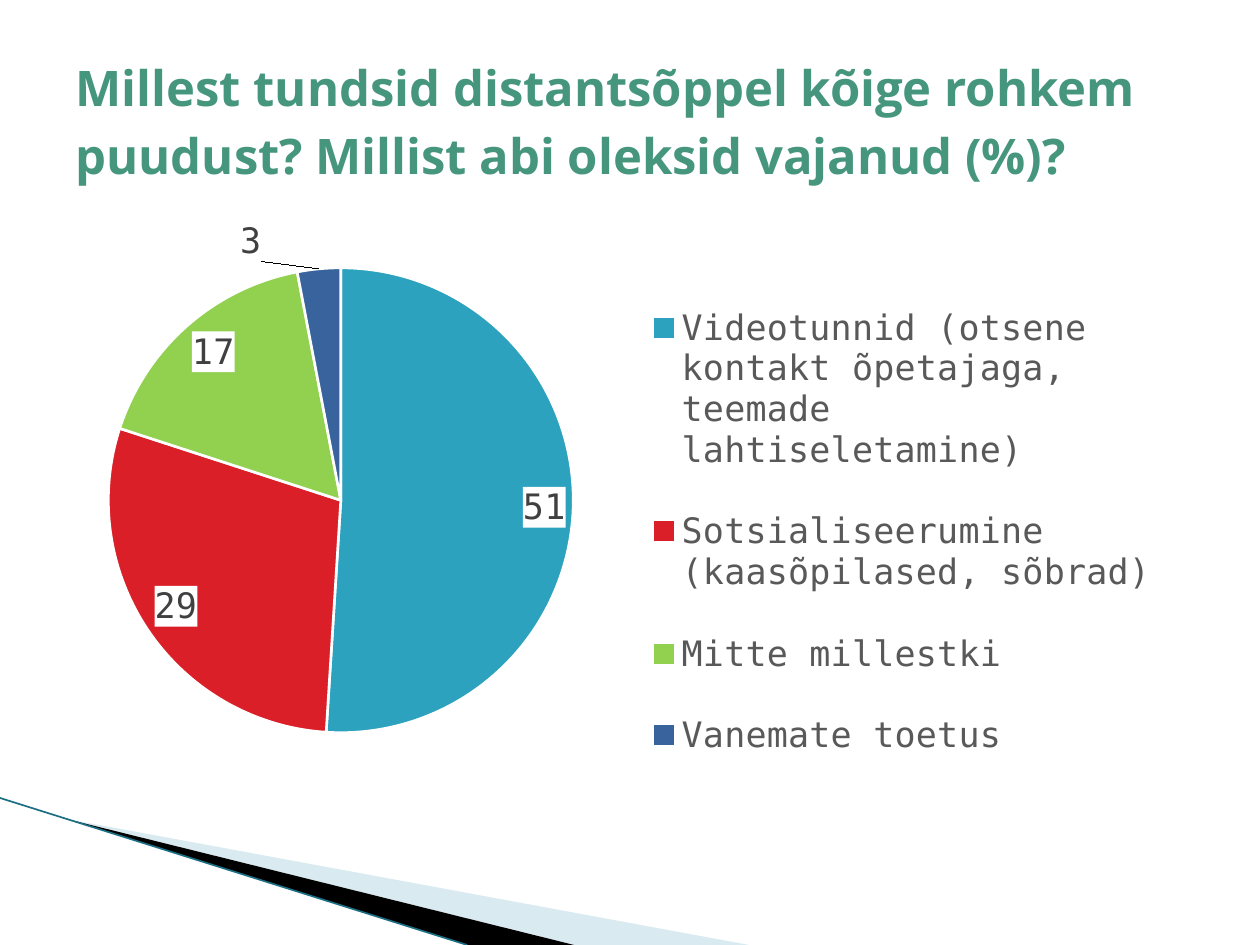
from lxml import etree
from pptx import Presentation
from pptx import util as u
from pptx.chart import data as chart_data
from pptx.dml import color
from pptx.enum import chart as chart_enum, shapes, text
from pptx.oxml import ns, parse_xml

Pt = u.Pt
CHART_FONT = "DejaVu Sans Mono"
ANSWERS = [
    ("Videotunnid (otsene kontakt õpetajaga, teemade lahtiseletamine)", 51, "2DA2BF"),
    ("Sotsialiseerumine (kaasõpilased, sõbrad)", 29, "DA1F28"),
    ("Mitte millestki", 17, "92D050"),
    ("Vanemate toetus", 3, "39639D"),
]


def rgb(value):
    return color.RGBColor.from_string(value)


def format_font(font, hex_color, **values):
    for name, value in values.items():
        setattr(font, name, value)
    font.color.rgb = rgb(hex_color)


def manual_layout(x, y, width=None, height=None, inner=False):
    """Chart layout in fractions of the chart; without a size, an offset."""
    parts = ['<c:layoutTarget val="inner"/>'] if inner else []
    if width is not None:
        parts += ['<c:xMode val="edge"/>', '<c:yMode val="edge"/>']
    sizes = {"x": x, "y": y, "w": width, "h": height}
    parts += [f'<c:{name} val="{value}"/>' for name, value in sizes.items() if value is not None]
    return parse_xml(f'<c:layout {ns.nsdecls("c")}><c:manualLayout>{"".join(parts)}'
                     '</c:manualLayout></c:layout>')


def set_layout(parent, layout, before):
    for old in parent.findall(ns.qn("c:layout")):
        parent.remove(old)
    parent.find(ns.qn(before)).addprevious(layout)


def add_wedge(slide, points, hex_color, opacity=None):
    builder = slide.shapes.build_freeform(*points[0], scale=Pt(1))
    builder.add_line_segments(points[1:], close=True)
    wedge = builder.convert_to_shape()
    wedge.shadow.inherit = False
    wedge.fill.solid()
    wedge.fill.fore_color.rgb = rgb(hex_color)
    wedge.line.fill.background()
    if opacity:
        fill_color = wedge.fill._xPr.find(".//" + ns.qn("a:srgbClr"))
        etree.SubElement(fill_color, ns.qn("a:alpha"), val=str(opacity * 1000))


def add_corner(slide, left, top, width, height):
    """Sweeping wedges in the bottom left corner."""
    bottom = top + height
    tip = (left + 38, top + 12)
    add_wedge(slide, [tip, (left + width, bottom), (left + 328, bottom)], "A0CBDC", 40)
    add_wedge(slide, [tip, (left + 328, bottom), (left + 267, bottom)], "000000")
    edge = slide.shapes.add_connector(
        shapes.MSO_CONNECTOR.STRAIGHT, Pt(left), Pt(top), Pt(left + 267), Pt(bottom))
    edge.line.width = Pt(0.95)
    edge.line.color.rgb = rgb("1C6F83")
    etree.SubElement(edge._element.spPr, ns.qn("a:effectLst"))


def add_title(slide, left, top, width, height):
    title = slide.shapes.title
    title.left, title.top, title.width, title.height = map(Pt, (left, top, width, height))
    frame = title.text_frame
    frame.text = "Millest tundsid distantsõppel kõige rohkem puudust? Millist abi oleksid vajanud (%)?"
    frame.word_wrap = True
    frame.auto_size = text.MSO_AUTO_SIZE.NONE
    frame.vertical_anchor = text.MSO_ANCHOR.MIDDLE
    paragraph = frame.paragraphs[0]
    paragraph.alignment = text.PP_ALIGN.LEFT
    paragraph.line_spacing = 1.15
    format_font(paragraph.runs[0].font, "45967D", name="Open Sans", size=Pt(28), bold=True)


def add_pie(slide, left, top, width, height):
    values = chart_data.CategoryChartData()
    values.categories = [name for name, _, _ in ANSWERS]
    values.add_series("Series 1", [value for _, value, _ in ANSWERS])
    chart = slide.shapes.add_chart(
        chart_enum.XL_CHART_TYPE.PIE, *map(Pt, (left, top, width, height)), values).chart
    chart.has_title = False
    format_font(chart.font, "000000", name=CHART_FONT, size=Pt(10))

    # Slices
    plot = chart.plots[0]
    plot.vary_by_categories = True
    series = plot.series[0]
    for index, (_, _, hex_color) in enumerate(ANSWERS):
        slice_format = series.points[index].format
        slice_format.fill.solid()
        slice_format.fill.fore_color.rgb = rgb(hex_color)
        slice_format.line.color.rgb = rgb("FFFFFF")
        slice_format.line.width = Pt(1.5)

    # Value labels on white, the smallest one outside with a leader line
    label_font = {"name": CHART_FONT, "size": Pt(20)}
    labels = series.data_labels
    labels.show_value = True
    labels.position = chart_enum.XL_LABEL_POSITION.INSIDE_END
    format_font(labels.font, "404040", **label_font)
    labels._element.find(ns.qn("c:txPr")).addprevious(parse_xml(
        f'<c:spPr {ns.nsdecls("c", "a")}><a:solidFill><a:srgbClr val="FFFFFF"/>'
        '</a:solidFill></c:spPr>'))
    small = series.points[len(ANSWERS) - 1].data_label
    format_font(small.font, "404040", **label_font)
    small.position = chart_enum.XL_LABEL_POSITION.OUTSIDE_END
    small_label = labels._element.find(ns.qn("c:dLbl"))
    small_label.find(ns.qn("c:idx")).addnext(manual_layout(-0.05, 0))

    # Legend
    chart.has_legend = True
    legend = chart.legend
    legend.position = chart_enum.XL_LEGEND_POSITION.BOTTOM
    legend.include_in_layout = False
    format_font(legend.font, "595959", **label_font)
    set_layout(legend._element, manual_layout(0.51, 0.1, 0.46, 0.85), "c:overlay")
    plot_area = plot._element.getparent()
    set_layout(plot_area, manual_layout(0.04, 0.1, 0.41, 0.75, inner=True), "c:pieChart")


def main():
    presentation = Presentation()
    presentation.slide_width, presentation.slide_height = Pt(720), Pt(540)
    slide = presentation.slides.add_slide(presentation.slide_layouts[5])
    add_corner(slide, 0, 456, 428, 84)
    add_pie(slide, 36, 116.64, 648, 356.4)
    add_title(slide, 36, 21.6, 648, 90)
    presentation.save("out.pptx")


if __name__ == "__main__":
    main()
